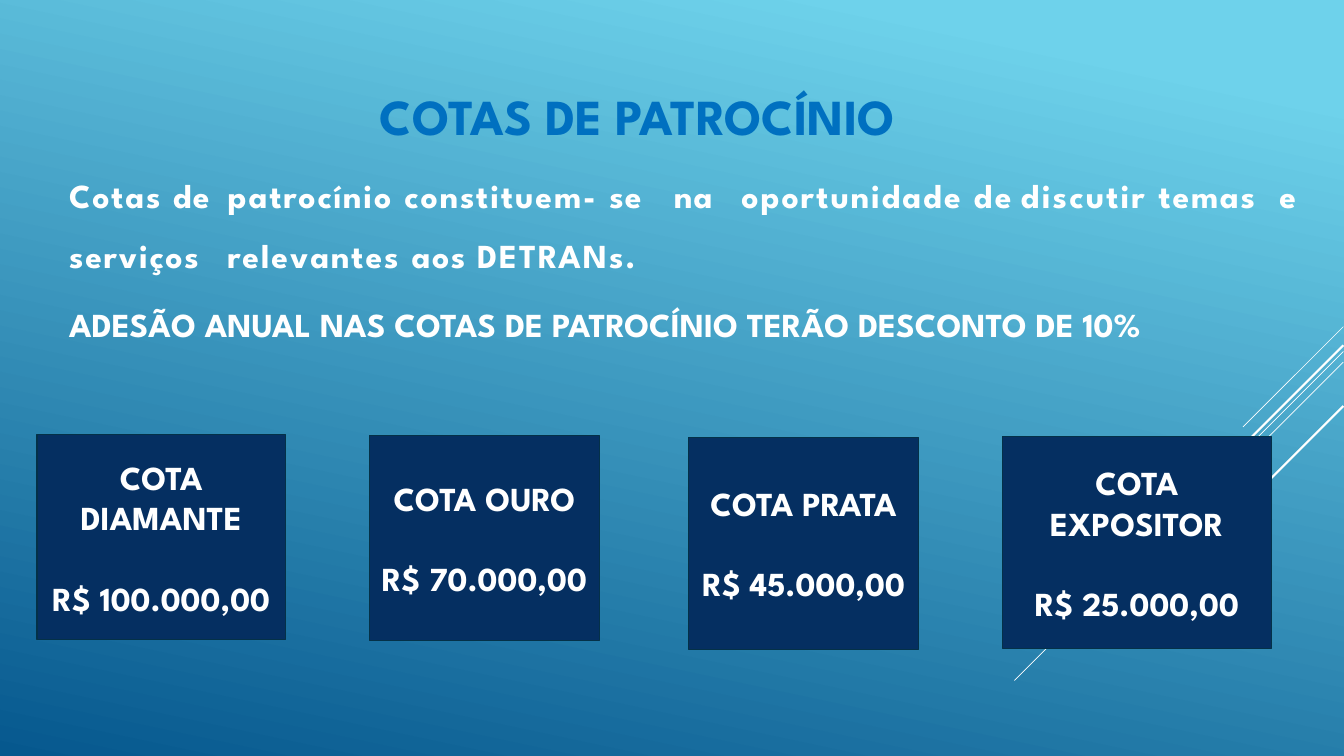
from dataclasses import dataclass
from typing import Any

import pptx
import pptx.dml.color
import pptx.enum.shapes
import pptx.enum.text
import pptx.oxml.ns
import pptx.util
from lxml import etree

Pt = pptx.util.Pt
Align = pptx.enum.text.PP_ALIGN
Anchor = pptx.enum.text.MSO_ANCHOR


@dataclass(frozen=True)
class Theme:
    font: str = "League Spartan"
    title_size: float = 54
    body_size: float = 36
    title: str = "0070C0"
    light: str = "FFFFFF"
    box_fill: str = "052F61"
    box_line: str = "043148"
    sky: str = "6ED2EB"
    deep: str = "06588E"


@dataclass(frozen=True)
class Frame:
    left: float
    top: float
    width: float
    height: float

    def lengths(self) -> list[int]:
        return [Pt(value) for value in (self.left, self.top, self.width, self.height)]


@dataclass(frozen=True)
class Quota:
    name: str
    price: str
    frame: Frame


@dataclass(frozen=True)
class Ray:
    """Diagonal that starts at the right edge and falls at 45 degrees."""
    top: float
    reach: float
    weight: float


THEME = Theme()
RIGHT_EDGE = 1439.3

RAYS = [
    Ray(350, 107.5, 0.75),
    Ray(376.6, 352.5, 0.75),
    Ray(388, 224, 0.75),
    Ray(370, 206, 2.25),
    Ray(435, 150, 2.25),
]

QUOTAS = [
    Quota("COTA DIAMANTE", "R$ 100.000,00", Frame(39.6, 465.8, 266.4, 219.6)),
    Quota("COTA OURO", "R$ 70.000,00", Frame(396, 466.6, 246.2, 219.6)),
    Quota("COTA PRATA", "R$ 45.000,00", Frame(738, 468.7, 246.2, 226.8)),
    Quota("COTA EXPOSITOR", "R$ 25.000,00", Frame(1074.2, 468, 288, 226.8)),
]

# Pieces of the introduction with their letter spacing in points
INTRODUCTION = [
    ("Cotas ", 1.9), ("de\t", 1.2), ("patrocínio constituem- ", 2.1),
    ("se\tna\t", 1.2), ("oportunidade ", 2.1), ("d", 2.4), ("e ", 0.1),
    ("discutir ", 2.4), ("temas\t", 1.9), ("e\t", 0.1), ("serviços \t", 2),
    ("relevantes ", 2.1), ("aos ", 1.6), ("DETRANs.", 2.1),
]
DISCOUNT = [("ADESÃO ANUAL NAS COTAS DE PATROCÍNIO TERÃO DESCONTO DE 10%", 0)]
TAB_STOPS = [97.2, 169.9, 208.1]


def rgb(value: str) -> Any:
    return pptx.dml.color.RGBColor.from_string(value)


def apply(target: Any, formats: dict[str, Any]) -> None:
    for name, value in formats.items():
        setattr(target, name, value)


def add_run(paragraph: Any, text: str, size: float, color: str, spacing: float = 0) -> None:
    run = paragraph.add_run()
    run.text = text
    apply(run.font, {"name": THEME.font, "size": Pt(size), "bold": True})
    run.font.color.rgb = rgb(color)
    if spacing:
        run._r.get_or_add_rPr().set("spc", str(round(spacing * 100)))


def add_text_box(slide: Any, frame: Frame) -> Any:
    text_frame = slide.shapes.add_textbox(*frame.lengths()).text_frame
    apply(text_frame, {
        "word_wrap": True,
        "auto_size": pptx.enum.text.MSO_AUTO_SIZE.SHAPE_TO_FIT_TEXT,
    })
    return text_frame


def set_body_format(paragraph: Any) -> None:
    apply(paragraph, {"alignment": Align.JUSTIFY, "line_spacing": 1.5, "space_before": Pt(9)})
    properties = paragraph._p.get_or_add_pPr()
    properties.set("marL", str(Pt(0.72)))
    tab_list = etree.SubElement(properties, pptx.oxml.ns.qn("a:tabLst"))
    for position in TAB_STOPS:
        etree.SubElement(tab_list, pptx.oxml.ns.qn("a:tab"), pos=str(Pt(position)), algn="l")


def paint_background(slide: Any) -> None:
    fill = slide.background.fill
    fill.gradient()
    fill.gradient_angle = 258
    for stop, position, color in zip(fill.gradient_stops, (0.1, 1), (THEME.sky, THEME.deep)):
        stop.position = position
        stop.color.rgb = rgb(color)


def draw_ray(slide: Any, ray: Ray) -> None:
    connector = slide.shapes.add_connector(
        pptx.enum.shapes.MSO_CONNECTOR.STRAIGHT,
        Pt(RIGHT_EDGE), Pt(ray.top), Pt(RIGHT_EDGE - ray.reach), Pt(ray.top + ray.reach))
    connector.line.color.rgb = rgb(THEME.light)
    connector.line.width = Pt(ray.weight)
    etree.SubElement(connector._element.spPr, pptx.oxml.ns.qn("a:effectLst"))


def draw_quota(slide: Any, quota: Quota) -> None:
    shape = slide.shapes.add_shape(
        pptx.enum.shapes.MSO_SHAPE.RECTANGLE, *quota.frame.lengths())
    shape.shadow.inherit = False
    shape.fill.solid()
    shape.fill.fore_color.rgb = rgb(THEME.box_fill)
    shape.line.color.rgb = rgb(THEME.box_line)
    shape.line.width = Pt(1.25)
    text_frame = shape.text_frame
    apply(text_frame, {"word_wrap": True, "vertical_anchor": Anchor.MIDDLE})
    name, price = text_frame.paragraphs[0], text_frame.add_paragraph()
    price.space_before = Pt(43)
    for paragraph, text in ((name, quota.name), (price, quota.price)):
        paragraph.alignment = Align.CENTER
        add_run(paragraph, text, THEME.body_size, THEME.light)


def main() -> None:
    presentation = pptx.Presentation()
    apply(presentation, {"slide_width": Pt(1440), "slide_height": Pt(810)})
    slide = presentation.slides.add_slide(presentation.slide_layouts[6])

    # Background and diagonal rays
    paint_background(slide)
    for ray in RAYS:
        draw_ray(slide, ray)

    # Title
    title = add_text_box(slide, Frame(162, 87.1, 1056.2, 72.7)).paragraphs[0]
    title.alignment = Align.CENTER
    add_run(title, "COTAS DE PATROCÍNIO ", THEME.title_size, THEME.title)

    # Introduction and discount
    body = add_text_box(slide, Frame(66.2, 162, 1332, 212.4))
    for paragraph, pieces in ((body.paragraphs[0], INTRODUCTION),
                              (body.add_paragraph(), DISCOUNT)):
        set_body_format(paragraph)
        for text, spacing in pieces:
            add_run(paragraph, text, THEME.body_size, THEME.light, spacing)

    # Sponsorship quotas
    for quota in QUOTAS:
        draw_quota(slide, quota)

    presentation.save("out.pptx")


if __name__ == "__main__":
    main()
